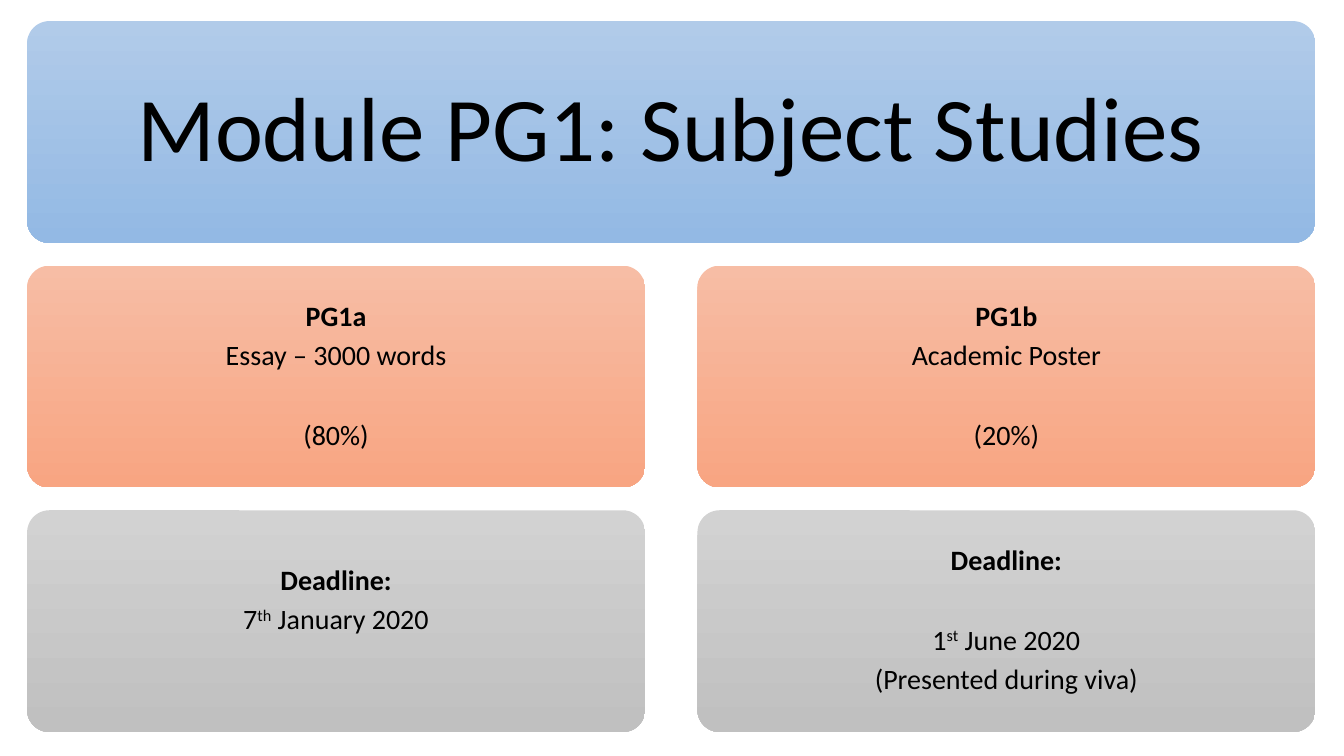
from pptx import Presentation
from pptx.dml.color import RGBColor
from pptx.enum.shapes import MSO_SHAPE
from pptx.enum.text import MSO_ANCHOR, MSO_AUTO_SIZE, PP_ALIGN
from pptx.util import Pt

MARGIN_LEFT, MARGIN_TOP = 19.4, 15.1
FULL_WIDTH, CARD_WIDTH, CARD_HEIGHT = 920.2, 441.4, 158.4
ROW_PITCH = 174.7
LINE_PITCH, PARAGRAPH_GAP = 28.6, 6.6
BLUE = ("B1CBE9", "93B9E4")
ORANGE = ("F7BDA5", "F8A582")
GRAY = ("D2D2D2", "C0C0C0")


def color(value):
    """Turn a hex string into a colour."""
    return RGBColor.from_string(value)


def add_panel(slide, left, top, width, colors):
    """Add a rounded panel with a gradient running from top to bottom."""
    panel = slide.shapes.add_shape(
        MSO_SHAPE.ROUNDED_RECTANGLE, Pt(left), Pt(top), Pt(width), Pt(CARD_HEIGHT)
    )
    panel.adjustments[0] = 0.1
    panel.shadow.inherit = False
    panel.line.fill.background()
    panel.fill.gradient()
    panel.fill.gradient_angle = 270
    for stop, value in zip(panel.fill.gradient_stops, colors):
        stop.color.rgb = color(value)
    return panel


def format_frame(frame, inset, extra_bottom=0):
    """Centre a text frame vertically with equal insets."""
    frame.word_wrap = True
    frame.auto_size = MSO_AUTO_SIZE.NONE
    frame.vertical_anchor = MSO_ANCHOR.MIDDLE
    frame.margin_left = frame.margin_right = frame.margin_top = Pt(inset)
    frame.margin_bottom = Pt(inset + extra_bottom)


def format_paragraph(paragraph, size, bold=False):
    """Apply the common centred paragraph style."""
    paragraph.alignment = PP_ALIGN.CENTER
    paragraph.line_spacing = 0.9
    paragraph.space_before = Pt(0)
    paragraph.font.name = "Calibri"
    paragraph.font.size = Pt(size)
    paragraph.font.bold = bold
    paragraph.font.color.rgb = color("000000")


def add_header(slide, left, top, text):
    """Place the title over a full-width panel."""
    panel = add_panel(slide, left, top, FULL_WIDTH, BLUE)
    title = slide.shapes.title
    title.element.addprevious(panel.element)
    title.left, title.top = Pt(left), Pt(top)
    title.width, title.height = Pt(FULL_WIDTH), Pt(CARD_HEIGHT)
    format_frame(title.text_frame, 20)
    title.text_frame.text = text
    format_paragraph(title.text_frame.paragraphs[0], 65)


def add_card(slide, left, top, colors, lines, gap_after=None, extra_bottom=0):
    """Add a card with a bold heading; a caret pair marks a superscript."""
    frame = add_panel(slide, left, top, CARD_WIDTH, colors).text_frame
    format_frame(frame, 6, extra_bottom)
    for index, line in enumerate(lines):
        paragraph = frame.add_paragraph() if index else frame.paragraphs[0]
        format_paragraph(paragraph, 20, bold=index == 0)
        gap = LINE_PITCH if index == gap_after else 0
        paragraph.space_after = Pt(PARAGRAPH_GAP + gap)
        for position, part in enumerate(line.split("^")):
            run = paragraph.add_run()
            run.text = part
            if position == 1:
                run.font._element.set("baseline", "30000")


def add_module_slide(presentation):
    """Build the module overview with its two assessment columns."""
    slide = presentation.slides.add_slide(presentation.slide_layouts[5])
    add_header(slide, MARGIN_LEFT, MARGIN_TOP, "Module PG1: Subject Studies")
    columns = [
        (
            ["PG1a", "Essay – 3000 words", "(80%)"],
            ["Deadline:", "7^th^ January 2020"], None, LINE_PITCH,
        ),
        (
            ["PG1b", "Academic Poster", "(20%)"],
            ["Deadline:", "1^st^ June 2020", "(Presented during viva)"], 0, 0,
        ),
    ]
    for index, (task, deadline, deadline_gap, extra_bottom) in enumerate(columns):
        left = MARGIN_LEFT + index * (FULL_WIDTH - CARD_WIDTH)
        add_card(slide, left, MARGIN_TOP + ROW_PITCH, ORANGE, task, 1)
        add_card(
            slide, left, MARGIN_TOP + 2 * ROW_PITCH, GRAY,
            deadline, deadline_gap, extra_bottom,
        )


def main():
    """Create and save the presentation."""
    presentation = Presentation()
    presentation.slide_width, presentation.slide_height = Pt(960), Pt(540)
    add_module_slide(presentation)
    presentation.save("out.pptx")


if __name__ == "__main__":
    main()
